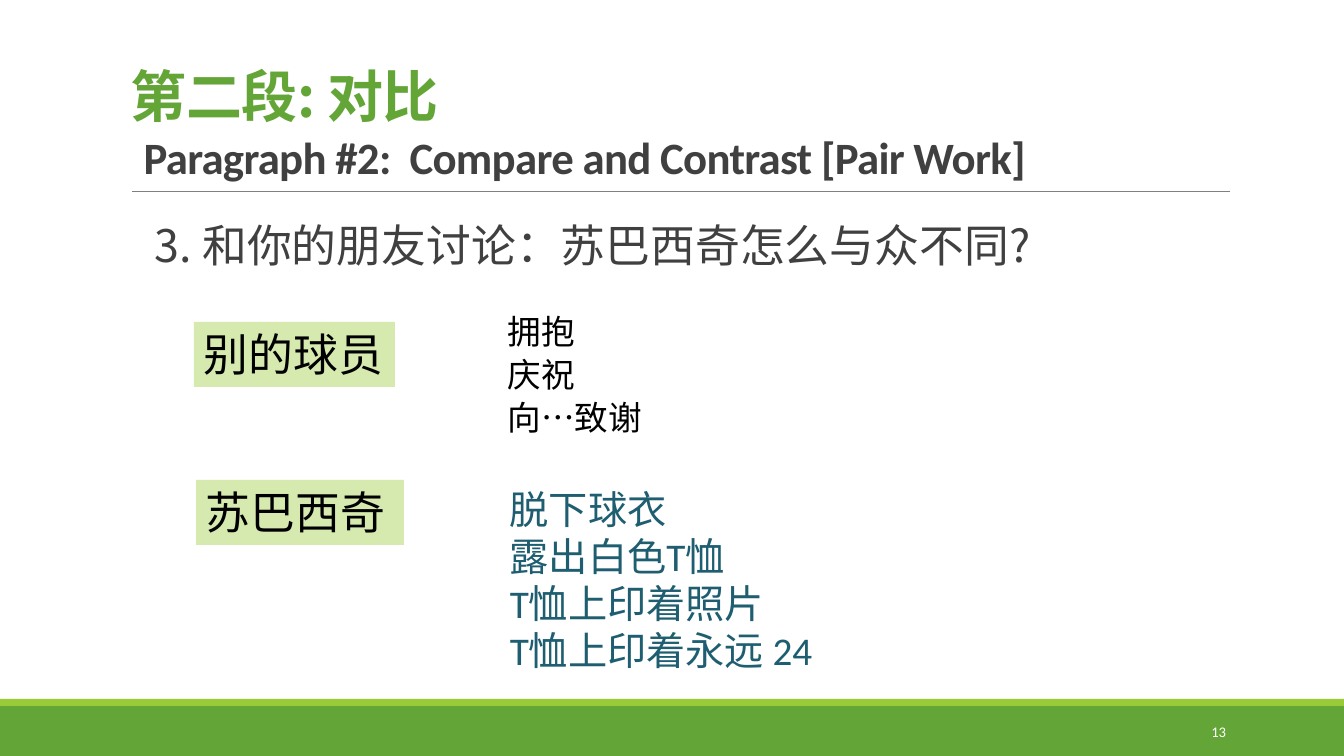
from lxml import etree
from pptx import Presentation, util as u
from pptx.dml.color import RGBColor
from pptx.enum import shapes, text
from pptx.oxml.ns import qn

PX = 914400 / 100.8
HAN, LATIN = "Noto Sans CJK SC", "Calibri"
GREEN, LIME, PALE = "63A537", "99CB38", "D6EAAF"
GREY, BLACK, TEAL = "404040", "000000", "1E5E70"


def px(*lengths):
    return [u.Emu(round(length * PX)) for length in lengths]


def add_text(box, lines, size, color, font=HAN):
    area = slide.shapes.add_textbox(*px(*box))
    frame = area.text_frame
    frame.word_wrap = True
    frame.text = "\n".join(lines)
    for paragraph in frame.paragraphs:
        for run in paragraph.runs:
            run.font.size = u.Pt(size)
            run.font.name = font
            run.font.color.rgb = RGBColor.from_string(color)
            etree.SubElement(run.font._element, qn("a:ea"), typeface=HAN)
    return area


deck = Presentation()
deck.slide_width, deck.slide_height = px(1344, 756)
slide = deck.slides.add_slide(deck.slide_layouts[6])

for top, height, color in [(706, 50, GREEN), (699, 7, LIME)]:
    band = slide.shapes.add_shape(shapes.MSO_SHAPE.RECTANGLE, *px(0, top, 1344, height))
    band.shadow.inherit = False
    band.fill.solid()
    band.fill.fore_color.rgb = RGBColor.from_string(color)
    band.line.fill.background()

rule = slide.shapes.add_connector(shapes.MSO_CONNECTOR.STRAIGHT, *px(132, 191, 1230, 191))
rule.line.color.rgb = RGBColor.from_string("808080")
rule.line.width = u.Pt(0.5)
etree.SubElement(rule._element.spPr, qn("a:effectLst"))

title = add_text((121, 31, 1109, 160), ["第二段: 对比\v "], 40, GREEN).text_frame
title.vertical_anchor = text.MSO_ANCHOR.BOTTOM
heading = title.paragraphs[0]
heading.line_spacing = 0.85
subtitle = heading.add_run()
subtitle.text = "Paragraph #2:  Compare and Contrast [Pair Work]"
subtitle.font.size = u.Pt(32)
subtitle.font.name = LATIN
subtitle.font.color.rgb = RGBColor.from_string(GREY)
for run in heading.runs:
    run.font.bold = True
    run.font._element.set("spc", "-50")

question = add_text((155, 219, 1075, 78), ["3. 和你的朋友讨论：苏巴西奇怎么与众不同?"], 32, GREY).text_frame
question.margin_left = question.margin_right = 0
question.paragraphs[0].line_spacing = 0.9
question.paragraphs[0].space_before = u.Pt(12)
question.paragraphs[0].space_after = u.Pt(2)

for label, box in [("别的球员", (194, 322, 201, 65)), ("苏巴西奇", (196, 480, 208, 65))]:
    player = add_text(box, [label], 32, BLACK)
    player.fill.solid()
    player.fill.fore_color.rgb = RGBColor.from_string(PALE)
    player.text_frame.word_wrap = False

others_actions = add_text((481, 306, 271, 174), ["拥抱", "庆祝", "向…致谢"], 24, BLACK)
for paragraph in others_actions.text_frame.paragraphs:
    paragraph.space_after = u.Pt(2)
    properties = paragraph._p.get_or_add_pPr()
    properties.set("marL", "91440")
    properties.set("indent", "-91440")
    bullet_color = etree.SubElement(properties, qn("a:buClr"))
    etree.SubElement(bullet_color, qn("a:srgbClr"), val=LIME)
    etree.SubElement(properties, qn("a:buChar"), char=" ")

subasic_actions = ["脱下球衣", "露出白色T恤", "T恤上印着照片", "T恤上印着永远 24"]
add_text((500, 480, 384, 201), subasic_actions, 28, TEAL, LATIN)

page = add_text((1092, 712, 144, 40), ["13"], 10.5, "FFFFFF", LATIN).text_frame
page.vertical_anchor = text.MSO_ANCHOR.MIDDLE
page.paragraphs[0].alignment = text.PP_ALIGN.RIGHT

deck.save("out.pptx")
